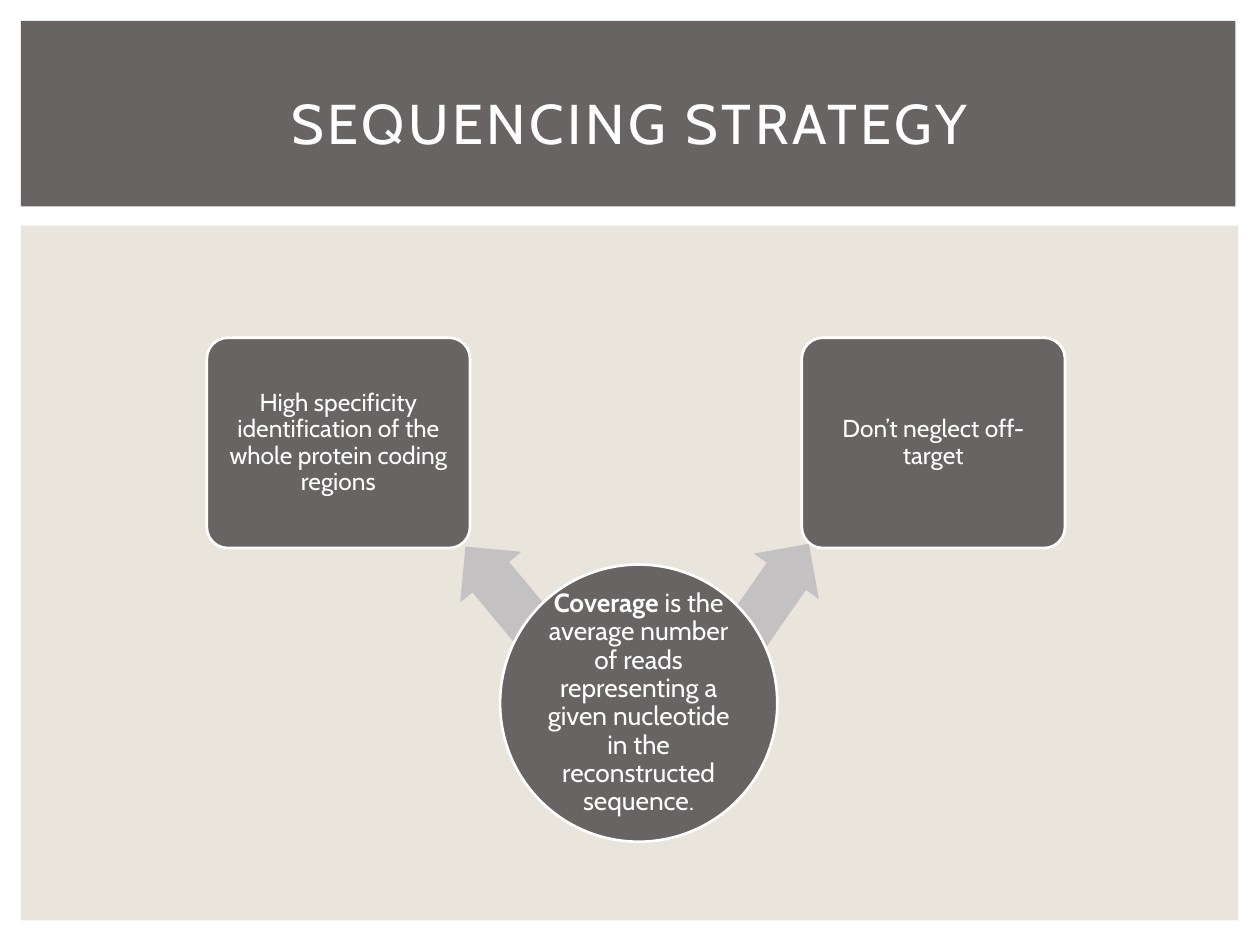
import pptx
import pptx.dml.color
import pptx.enum.shapes
import pptx.enum.text
import pptx.util

Pt = pptx.util.Pt
SHAPE = pptx.enum.shapes.MSO_SHAPE
COLORS = {"dark": "696464", "sand": "E9E5DC", "arrow": "C3C1C1", "white": "FFFFFF"}


def rgb(name):
    """Return the palette colour of that name."""
    return pptx.dml.color.RGBColor.from_string(COLORS[name])


def add_block(slide, kind, box, fill, outlined=False):
    """Add a flat preset shape, with a white outline if wanted."""
    block = slide.shapes.add_shape(kind, *(Pt(length) for length in box))
    block.shadow.inherit = False
    block.fill.solid()
    block.fill.fore_color.rgb = rgb(fill)
    if outlined:
        block.line.color.rgb = rgb("white")
        block.line.width = Pt(1.5)
    else:
        block.line.fill.background()
    return block


def write_text(holder, text, size, lead="", inset=0, line_spacing=0.9, tracking=0):
    """Fill a shape with centred white text, after an optional bold lead."""
    frame = holder.text_frame
    frame.word_wrap = True
    frame.auto_size = pptx.enum.text.MSO_AUTO_SIZE.NONE
    frame.vertical_anchor = pptx.enum.text.MSO_ANCHOR.MIDDLE
    frame.margin_left = frame.margin_right = Pt(inset)
    frame.margin_top = frame.margin_bottom = Pt(inset)
    paragraph = frame.paragraphs[0]
    paragraph.alignment = pptx.enum.text.PP_ALIGN.CENTER
    paragraph.line_spacing = line_spacing
    for words, bold in ((lead, True), (text, False)):
        if words:
            run = paragraph.add_run()
            run.text = words
            run.font.name = "Cabin"
            run.font.size = Pt(size)
            run.font.bold = bold
            run.font.color.rgb = rgb("white")
            if tracking:
                run.font._element.set("spc", str(tracking * 100))


def add_title(slide, text):
    """Place the slide title in front of its band."""
    title = slide.shapes.title
    title.left, title.top, title.width, title.height = Pt(30), Pt(28), Pt(660), Pt(83)
    write_text(title, text, 32, line_spacing=1.0, tracking=2)
    slide.shapes.element.append(title.element)


def add_arrow(slide, left, top, angle):
    """Add a turned arrow that leads out of the hub."""
    arrow = add_block(slide, SHAPE.LEFT_ARROW, (left, top, 121, 45.4), "arrow")
    arrow.adjustments[0] = 0.6
    arrow.adjustments[1] = 0.5
    arrow.rotation = angle


def add_goal(slide, left, text):
    """Add a rounded box for one goal."""
    goal = add_block(slide, SHAPE.ROUNDED_RECTANGLE, (left, 193, 150.4, 120.2), "dark", True)
    goal.adjustments[0] = 0.1
    write_text(goal, text, 14, inset=6.5)


def main():
    """Build and save the slide."""
    deck = pptx.Presentation()
    deck.slide_width, deck.slide_height = Pt(720), Pt(540)
    slide = deck.slides.add_slide(deck.slide_layouts[5])
    add_block(slide, SHAPE.RECTANGLE, (12, 128.9, 695.5, 397.1), "sand")
    add_block(slide, SHAPE.RECTANGLE, (12, 12, 694, 106), "dark")
    add_title(slide, "SEQUENCING STRATEGY")

    add_arrow(slide, 244.1, 336.2, 50.3)
    add_arrow(slide, 367.2, 337.7, 124.8)
    coverage = add_block(slide, SHAPE.OVAL, (285.8, 322.6, 158.4, 158.4), "dark", True)
    write_text(
        coverage,
        "is the average number of reads representing a given nucleotide "
        "in the reconstructed sequence.",
        15,
        lead="Coverage ",
    )
    add_goal(slide, 118.2, "High specificity identification of the whole protein coding regions")
    add_goal(slide, 458.2, "Don’t neglect off-target")
    deck.save("out.pptx")


if __name__ == "__main__":
    main()
